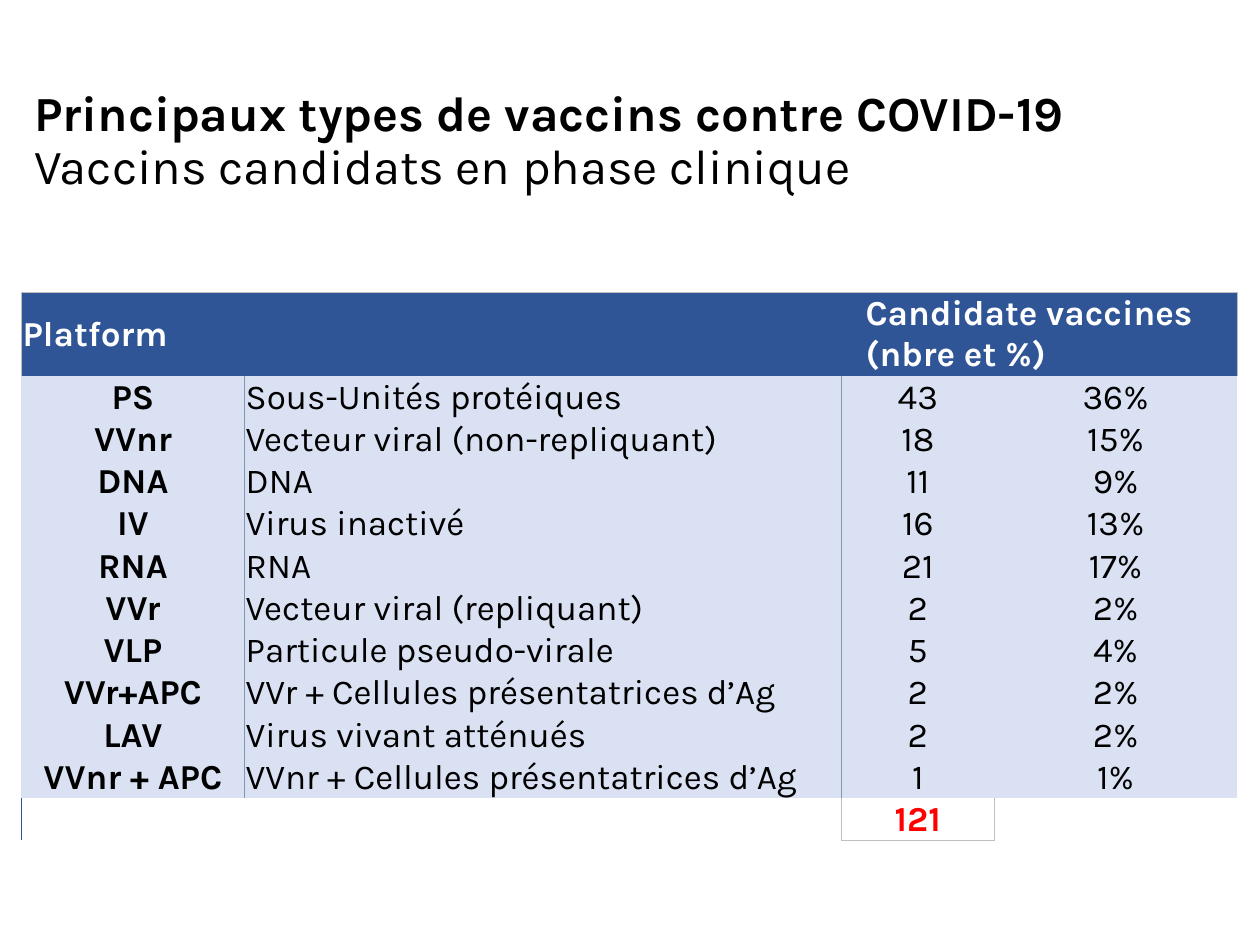
from copy import deepcopy
from dataclasses import dataclass

from lxml import etree
from pptx import Presentation
from pptx.dml.color import RGBColor
from pptx.enum.text import MSO_ANCHOR, MSO_AUTO_SIZE, PP_ALIGN
from pptx.oxml.ns import qn
from pptx.util import Inches, Pt

LEFT, CENTER = PP_ALIGN.LEFT, PP_ALIGN.CENTER
MIDDLE = MSO_ANCHOR.MIDDLE
NO_STYLE = "{2D5ABB26-0587-4C30-8999-92F81FD0307C}"


@dataclass(frozen=True)
class Theme:
    font: str = "Karla"
    title_size: int = 28
    table_size: int = 20
    text: str = "000000"
    header_text: str = "FFFFFF"
    total: str = "FF0000"
    header: str = "2F5597"
    body: str = "D9E1F2"
    grey: str = "BFBFBF"
    divider: str = "8497B0"


T = Theme()


def add_text(p, text, size=T.table_size, color=T.text, bold=False, align=LEFT):
    p.alignment = align
    r = p.add_run()
    r.text = text
    r.font.name, r.font.size, r.font.bold = T.font, Pt(size), bold
    r.font.color.rgb = RGBColor.from_string(color)
    return r


def set_borders(cell, **colors):
    """Draw half-point edges; keys are L, R, T and B, in that order."""
    tc_pr = cell._tc.get_or_add_tcPr()
    for i, (side, color) in enumerate(colors.items()):
        ln = etree.Element(qn(f"a:ln{side}"), w=str(Pt(0.5)))
        fill = etree.SubElement(ln, qn("a:solidFill"))
        etree.SubElement(fill, qn("a:srgbClr"), val=color)
        tc_pr.insert(i, ln)


prs = Presentation()
prs.slide_width, prs.slide_height = Inches(10), Inches(7.5)
s = prs.slides.add_slide(prs.slide_layouts[5])

# Title
title = s.shapes.title
title.left, title.top = Inches(0.17), Inches(0.4)
title.width, title.height = Inches(9.65), Inches(1.45)
tf = title.text_frame
tf.word_wrap, tf.auto_size, tf.vertical_anchor = True, MSO_AUTO_SIZE.NONE, MIDDLE
p = tf.paragraphs[0]
p.line_spacing = 0.9
r = add_text(p, "Principaux types de vaccins contre COVID-19", size=T.title_size, bold=True)
# The line break carries the run format, so that it keeps the line height
br = etree.SubElement(p._p, qn("a:br"))
br.append(deepcopy(r._r.get_or_add_rPr()))
add_text(p, "Vaccins candidats en phase clinique", size=T.title_size)

# Table
platforms = [
    ("PS", "Sous-Unités protéiques", "43", "36%"),
    ("VVnr", "Vecteur viral (non-repliquant)", "18", "15%"),
    ("DNA", "DNA", "11", "9%"),
    ("IV", "Virus inactivé", "16", "13%"),
    ("RNA", "RNA", "21", "17%"),
    ("VVr", "Vecteur viral (repliquant)", "2", "2%"),
    ("VLP", "Particule pseudo-virale", "5", "4%"),
    ("VVr+APC", "VVr + Cellules présentatrices d’Ag", "2", "2%"),
    ("LAV", "Virus vivant atténués", "2", "2%"),
    ("VVnr + APC", "VVnr + Cellules présentatrices d’Ag", "1", "1%"),
]
rows = [("Platform", "", "Candidate vaccines (nbre et %)", ""), *platforms, ("", "", "121", "")]
last = len(rows) - 1
col_widths = [1.77, 4.74, 1.21, 1.93]

frame = s.shapes.add_table(len(rows), len(col_widths), Inches(0.17), Inches(2.32),
                           Inches(9.65), Inches(4.46))
table = frame.table
table._tbl.tblPr.find(qn("a:tableStyleId")).text = NO_STYLE
table.first_row = table.horz_banding = False
for column, width in zip(table.columns, col_widths):
    column.width = Inches(width)
for row in table.rows:
    row.height = Inches(0.26)
frame.height = Inches(4.46)

for i, values in enumerate(rows):
    for j, value in enumerate(values):
        cell = table.cell(i, j)
        cell.vertical_anchor = MIDDLE
        cell.margin_left = cell.margin_right = cell.margin_top = Inches(0.01)
        cell.margin_bottom = 0
        if i == last:
            cell.fill.background()
        else:
            cell.fill.solid()
            cell.fill.fore_color.rgb = RGBColor.from_string(T.body if i else T.header)
        if value:
            color = T.header_text if i == 0 else T.total if i == last else T.text
            add_text(cell.text_frame.paragraphs[0], value, color=color,
                     bold=i in (0, last) or j == 0,
                     align=LEFT if i == 0 or j == 1 else CENTER)

table.cell(0, 2).margin_left = Inches(0.19)
table.cell(0, 2).merge(table.cell(0, 3))

set_borders(table.cell(0, 0), L=T.grey, T=T.grey)
set_borders(table.cell(0, 1), T=T.grey)
for j in (2, 3):
    set_borders(table.cell(0, j), R=T.grey, T=T.grey)
for i in range(1, last):
    set_borders(table.cell(i, 0), R=T.divider)
    set_borders(table.cell(i, 1), L=T.divider)
set_borders(table.cell(last, 0), L=T.header)
set_borders(table.cell(last, 1), R=T.grey)
set_borders(table.cell(last, 2), L=T.grey, R=T.grey, B=T.grey)
set_borders(table.cell(last, 3), L=T.grey)

prs.save("out.pptx")
